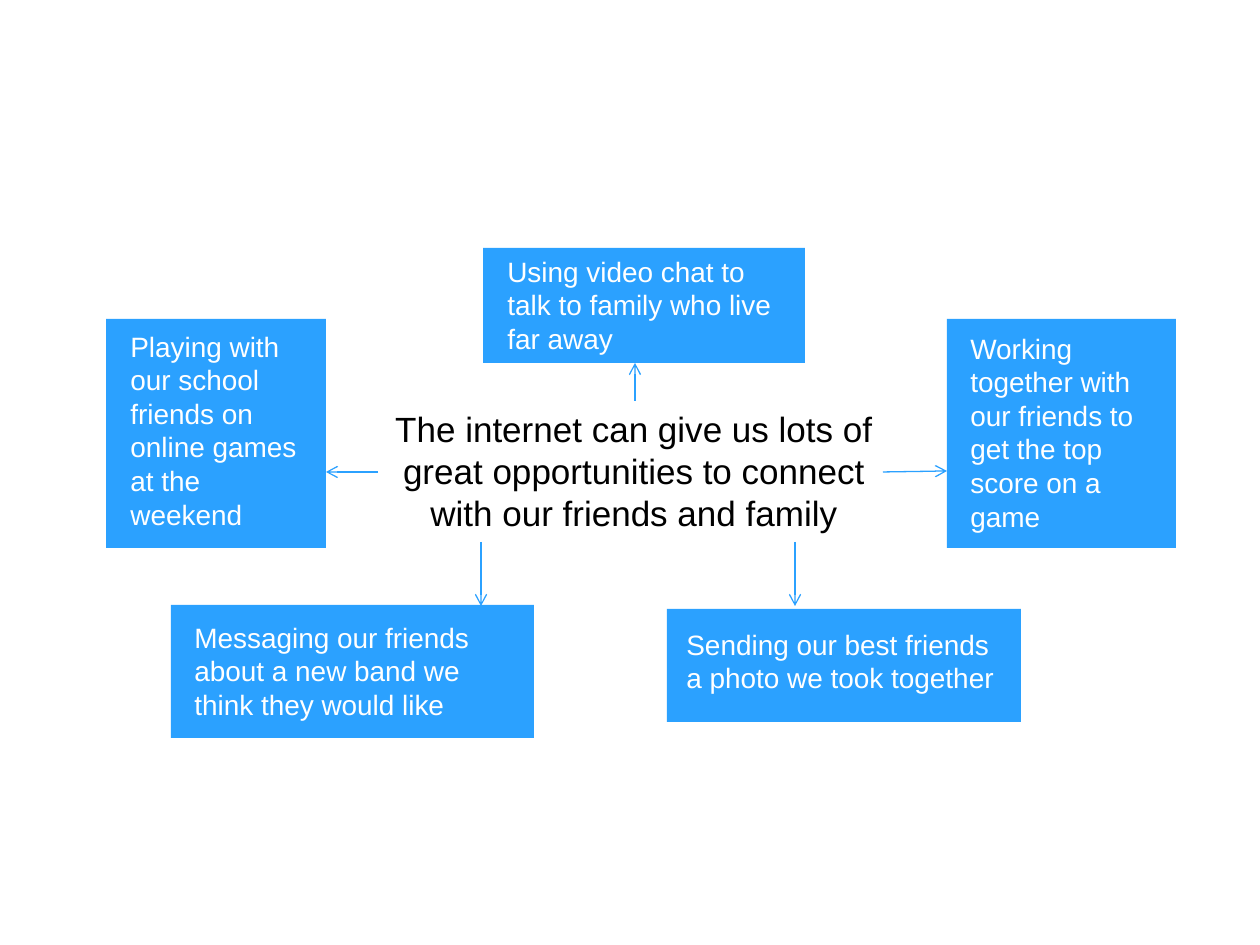
from lxml import etree
from pptx import Presentation
from pptx.dml.color import RGBColor
from pptx.enum.shapes import MSO_CONNECTOR, MSO_SHAPE
from pptx.enum.text import MSO_AUTO_SIZE, PP_ALIGN
from pptx.oxml.ns import qn
from pptx.util import Emu, Pt

RECT = MSO_SHAPE.RECTANGLE
STRAIGHT = MSO_CONNECTOR.STRAIGHT
LEFT, CENTER = PP_ALIGN.LEFT, PP_ALIGN.CENTER
GROW = MSO_AUTO_SIZE.SHAPE_TO_FIT_TEXT
BLUE = RGBColor(0x2B, 0xA1, 0xFF)
WHITE = RGBColor(0xFF, 0xFF, 0xFF)
BLACK = RGBColor(0x00, 0x00, 0x00)
FONT = "Arial"
PX_PER_INCH = 126

MESSAGE = ("The internet can give us lots of great opportunities "
           "to connect with our friends and family")
IDEAS = [
    ("Using video chat to talk to family who live far away",
     (483, 248, 322, 115), (12, 0, 300, 115), ((152, 153), (152, 115))),
    ("Playing with our school friends on online games at the weekend",
     (106, 319, 220, 229), (12, 4, 209, 217), ((272, 153), (220, 153))),
    ("Working together with our friends to get the top score on a game",
     (947, 319, 229, 229), (11, 6, 219, 217), ((-64, 153), (0, 152))),
    ("Messaging our friends about a new band we think they would like",
     (171, 605, 363, 133), (11, 9, 339, 115), ((310, -63), (310, 1))),
    ("Sending our best friends a photo we took together",
     (667, 609, 354, 113), (7, 12, 336, 81), ((128, -67), (128, -3))),
]


def px(*lengths):
    """Turn whole pixels into EMU."""
    return [Emu(round(n * 914400 / PX_PER_INCH)) for n in lengths]


def add_text(shapes, box, text, size, color, align=LEFT):
    """Add a wrapping text box with one run."""
    tb = shapes.add_textbox(*px(*box))
    tf = tb.text_frame
    tf.word_wrap = True
    tf.auto_size = GROW
    p = tf.paragraphs[0]
    p.alignment = align
    r = p.add_run()
    r.text = text
    r.font.name = FONT
    r.font.size = Pt(size)
    r.font.color.rgb = color


def add_arrow(shapes, start, end):
    """Add a thin blue line with an open arrowhead at its end."""
    cn = shapes.add_connector(STRAIGHT, *px(*start, *end))
    cn.line.color.rgb = BLUE
    cn.line.width = Pt(0.75)
    ln = cn.line._get_or_add_ln()
    etree.SubElement(ln, qn("a:tailEnd"), type="arrow")
    etree.SubElement(cn._element.spPr, qn("a:effectLst"))


def add_idea(s, text, box, text_box, arrow):
    """Group a blue box with its text and arrow, placed from the box corner."""
    x, y = box[:2]
    shapes = s.shapes.add_group_shape().shapes
    sp = shapes.add_shape(RECT, *px(*box))
    sp.shadow.inherit = False
    sp.fill.solid()
    sp.fill.fore_color.rgb = BLUE
    sp.line.fill.background()
    dx, dy, w, h = text_box
    add_text(shapes, (x + dx, y + dy, w, h), text, 16, WHITE)
    add_arrow(shapes, *[(x + ax, y + ay) for ax, ay in arrow])


def main():
    """Build the slide and save it."""
    prs = Presentation()
    prs.slide_width, prs.slide_height = px(1260, 945)
    s = prs.slides.add_slide(prs.slide_layouts[6])
    add_text(s.shapes, (360, 401, 548, 140), MESSAGE, 20, BLACK, CENTER)
    for idea in IDEAS:
        add_idea(s, *idea)
    prs.save("out.pptx")


if __name__ == "__main__":
    main()
